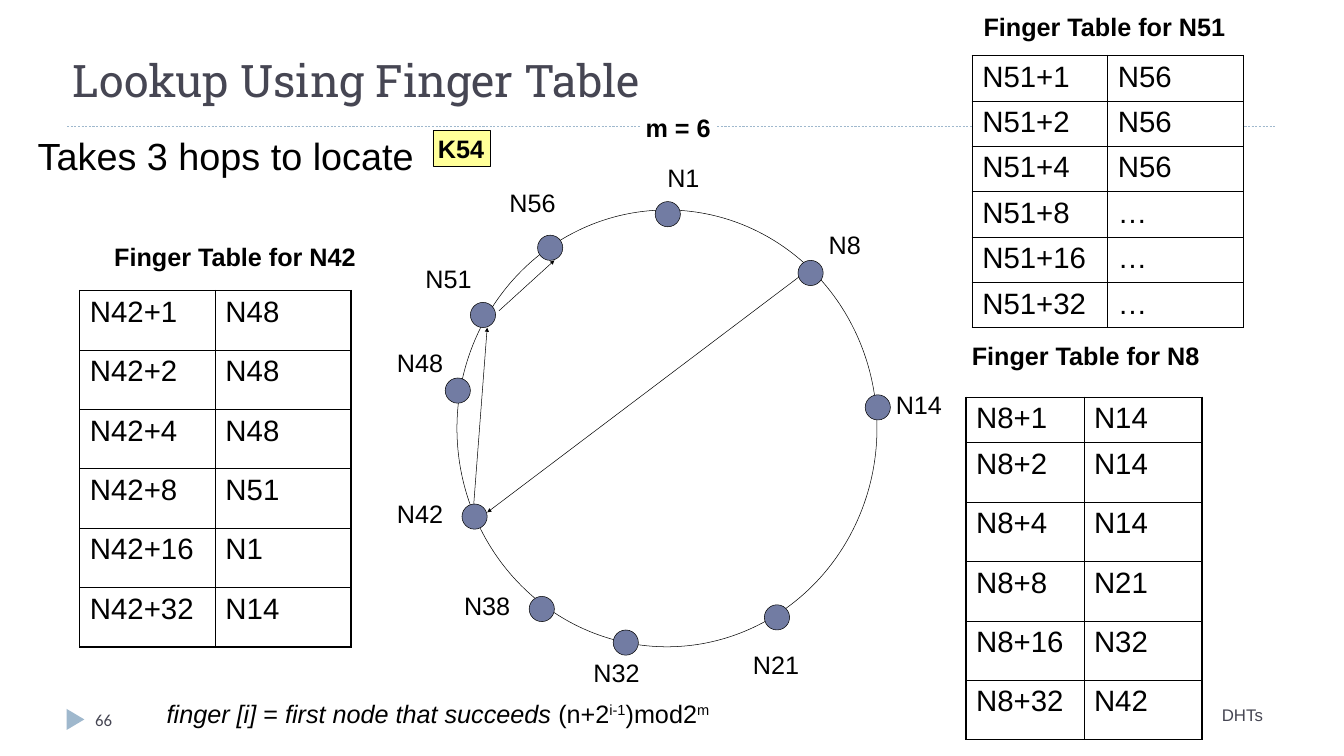
from typing import NamedTuple

from pptx import Presentation
from pptx import util as u
from pptx.dml.color import RGBColor
from pptx.enum import dml, shapes, text
from pptx.oxml import parse_xml
from pptx.oxml.ns import nsdecls

BLACK = RGBColor(0x00, 0x00, 0x00)
WHITE = RGBColor(0xFF, 0xFF, 0xFF)
SLATE = RGBColor(0x46, 0x46, 0x53)
PALE_BLUE = RGBColor(0x9F, 0xB8, 0xCD)
NODE_BLUE = RGBColor(0x72, 0x7C, 0xA3)
YELLOW = RGBColor(0xFF, 0xFF, 0x99)

COLUMNS, ROWS = 160, 90  # square grid, six units to the inch
NODE_SIZE = 3
LINE_HEIGHT = 4.26
SHORT_ROW, TALL_ROW = 5.4, 7.07


class Node(NamedTuple):
    name: str
    left: float
    top: float
    label_left: float
    label_top: float


class Hop(NamedTuple):
    start: tuple[float, float]
    end: tuple[float, float]


class FingerTable(NamedTuple):
    node: int
    left: float
    top: float
    column_width: float
    row_heights: list[float]
    successors: list[str]
    caption: tuple[float, float, float]  # left, top, width


class Span(NamedTuple):
    words: str
    italic: bool = False
    raised: bool = False


NODES = [
    Node("N1", 78, 24, 78.8, 19),
    Node("N8", 95, 31, 98, 27),
    Node("N14", 103, 47, 106, 46),
    Node("N21", 91, 72, 89, 77),
    Node("N32", 73, 75, 70, 78),
    Node("N38", 63, 71, 54.6, 70),
    Node("N42", 55, 60, 46.6, 59),
    Node("N48", 53, 45, 46.6, 41),
    Node("N51", 56, 36, 50, 31),
    Node("N56", 64, 28, 60, 22),
]
HOPS = [
    Hop((96.4, 32), (58, 61)),
    Hop((56.4, 60), (58, 39)),
    Hop((59.4, 37), (66, 31)),
]
TABLES = [
    FingerTable(8, 115, 47.3, 14.04, [SHORT_ROW] + [TALL_ROW] * 5,
                ["N14", "N14", "N14", "N21", "N32", "N42"], (115.1, 40.2, 28.6)),
    FingerTable(42, 9.5, 34.6, 16.14, [TALL_ROW] * 6,
                ["N48", "N48", "N48", "N51", "N1", "N14"], (13, 28.4, 30.3)),
    FingerTable(51, 115.74, 6.6, 16.14, [SHORT_ROW] * 6,
                ["N56", "N56", "N56", "…", "…", "…"], (116.5, 1, 30.3)),
]
FORMULA = [
    Span("finger [i]", italic=True), Span(" = "),
    Span("first node that succeeds ", italic=True), Span("(n+2"),
    Span("i-1", raised=True), Span(")mod2"), Span("m", raised=True),
]


def grid(units: float) -> int:
    return u.Inches(units / 6)


def paint(item, color: RGBColor) -> None:
    item.fill.solid()
    item.fill.fore_color.rgb = color


def style(para, size: float, color=BLACK, name="Arial", bold=False, align=text.PP_ALIGN.LEFT) -> None:
    para.alignment = align
    para.font.size, para.font.name, para.font.bold = u.Pt(size), name, bold
    para.font.color.rgb = color


def add_text(page, left, top, width, spans, size=36, height=LINE_HEIGHT, fit=True, **look):
    box = page.shapes.add_textbox(*map(grid, (left, top, width, height)))
    frame = box.text_frame
    frame.word_wrap = not fit
    frame.auto_size = text.MSO_AUTO_SIZE.SHAPE_TO_FIT_TEXT if fit else text.MSO_AUTO_SIZE.NONE
    para = frame.paragraphs[0]
    for part in [Span(spans)] if isinstance(spans, str) else spans:
        span = para.add_run()
        span.text = part.words
        if part.italic:
            span.font.italic = True
        if part.raised:
            span._r.get_or_add_rPr().set("baseline", "30000")
    style(para, size, **look)
    return box


def add_shape(page, kind, left, top, width, height, fill, outline=BLACK):
    shape = page.shapes.add_shape(kind, *map(grid, (left, top, width, height)))
    shape.shadow.inherit = False
    paint(shape, fill)
    if outline is None:
        shape.line.fill.background()
    else:
        shape.line.color.rgb, shape.line.width = outline, u.Pt(0.75)
    return shape


def add_line(page, start, end, color=BLACK, arrow=False):
    line = page.shapes.add_connector(shapes.MSO_CONNECTOR.STRAIGHT, *map(grid, (*start, *end)))
    line.line.color.rgb, line.line.width = color, u.Pt(0.75)
    if arrow:
        line.line._get_or_add_ln().append(parse_xml(f'<a:tailEnd {nsdecls("a")} type="triangle"/>'))
    line._element.spPr.append(parse_xml(f'<a:effectLst {nsdecls("a")}/>'))
    return line


def set_borders(cell, outer: dict[str, bool]) -> None:
    for side, is_outer in outer.items():
        width = u.Pt(2.25 if is_outer else 1)
        cell._tc.get_or_add_tcPr().append(parse_xml(
            f'<a:ln{side} {nsdecls("a")} w="{width}"><a:solidFill>'
            f'<a:srgbClr val="{BLACK}"/></a:solidFill></a:ln{side}>'))


def add_finger_table(page, finger: FingerTable) -> None:
    count = len(finger.successors)
    frame = page.shapes.add_table(count, 2, *map(grid, (
        finger.left, finger.top, 2 * finger.column_width, sum(finger.row_heights))))
    table = frame.table
    table.first_row = table.horz_banding = False
    for column in table.columns:
        column.width = grid(finger.column_width)
    for i, (height, successor) in enumerate(zip(finger.row_heights, finger.successors)):
        table.rows[i].height = grid(height)
        for j, words in enumerate((f"N{finger.node}+{2 ** i}", successor)):
            cell = table.cell(i, j)
            cell.text = words
            style(cell.text_frame.paragraphs[0], 42)
            cell.margin_left = cell.margin_right = u.Inches(0.2)
            cell.margin_top = cell.margin_bottom = u.Inches(0.1)
            set_borders(cell, {"L": j == 0, "R": j == 1, "T": i == 0, "B": i == count - 1})
            paint(cell, WHITE)  # keeps the title rule from crossing the text
    add_text(page, *finger.caption, f"Finger Table for N{finger.node}", bold=True)


def main() -> None:
    deck = Presentation()
    deck.slide_width, deck.slide_height = grid(COLUMNS), grid(ROWS)
    page = deck.slides.add_slide(deck.slide_layouts[5])

    # Title and its rule
    title = page.shapes.title
    title.left, title.top, title.width, title.height = map(grid, (8, 0, 144, 13))
    title.text_frame.text = "Lookup Using Finger Table"
    title.text_frame.vertical_anchor = text.MSO_ANCHOR.BOTTOM
    title.text_frame.auto_size = text.MSO_AUTO_SIZE.NONE
    style(title.text_frame.paragraphs[0], 64, SLATE, "Roboto Slab")
    rule = add_line(page, (8, 15), (152, 15), PALE_BLUE)
    rule.line.dash_style = dml.MSO_LINE.DASH

    # Footer
    marker = add_shape(page, shapes.MSO_SHAPE.ISOSCELES_TRIANGLE, 7.74, 84.6, 2.5, 2.1, PALE_BLUE, None)
    marker.rotation = 90
    add_text(page, 10.74, 84.2, 34.7, "66", 24, 4.8, fit=False, color=SLATE, name="Calibri")
    add_text(page, 89.64, 83.6, 61.3, "DHTs", 24, 4.8, fit=False, color=SLATE,
             align=text.PP_ALIGN.RIGHT)

    # Identifier ring with its hops and nodes
    add_shape(page, shapes.MSO_SHAPE.OVAL, 54.4, 25, 50, 52, WHITE)
    for hop in HOPS:
        add_line(page, hop.start, hop.end, arrow=True)
    for node in NODES:
        add_shape(page, shapes.MSO_SHAPE.OVAL, node.left, node.top, NODE_SIZE, NODE_SIZE, NODE_BLUE)
        add_text(page, node.label_left, node.label_top, 1.75 + 1.68 * len(node.name), node.name,
                 align=text.PP_ALIGN.CENTER)

    # Finger tables
    for finger_table in TABLES:
        add_finger_table(page, finger_table)

    # Notes around the ring
    bits = add_text(page, 76.26, 13.1, 9.1, "m = 6", bold=True)
    paint(bits, WHITE)
    add_text(page, 3.9, 15.5, 46.4, "Takes 3 hops to locate", 54, 6.06)
    key = add_text(page, 51.54, 15.54, 6.8, "K54", bold=True)
    paint(key, YELLOW)
    key.line.color.rgb, key.line.width = BLACK, u.Pt(0.75)
    add_text(page, 19.26, 82.8, 66.9, FORMULA)

    deck.save("out.pptx")


if __name__ == "__main__":
    main()
